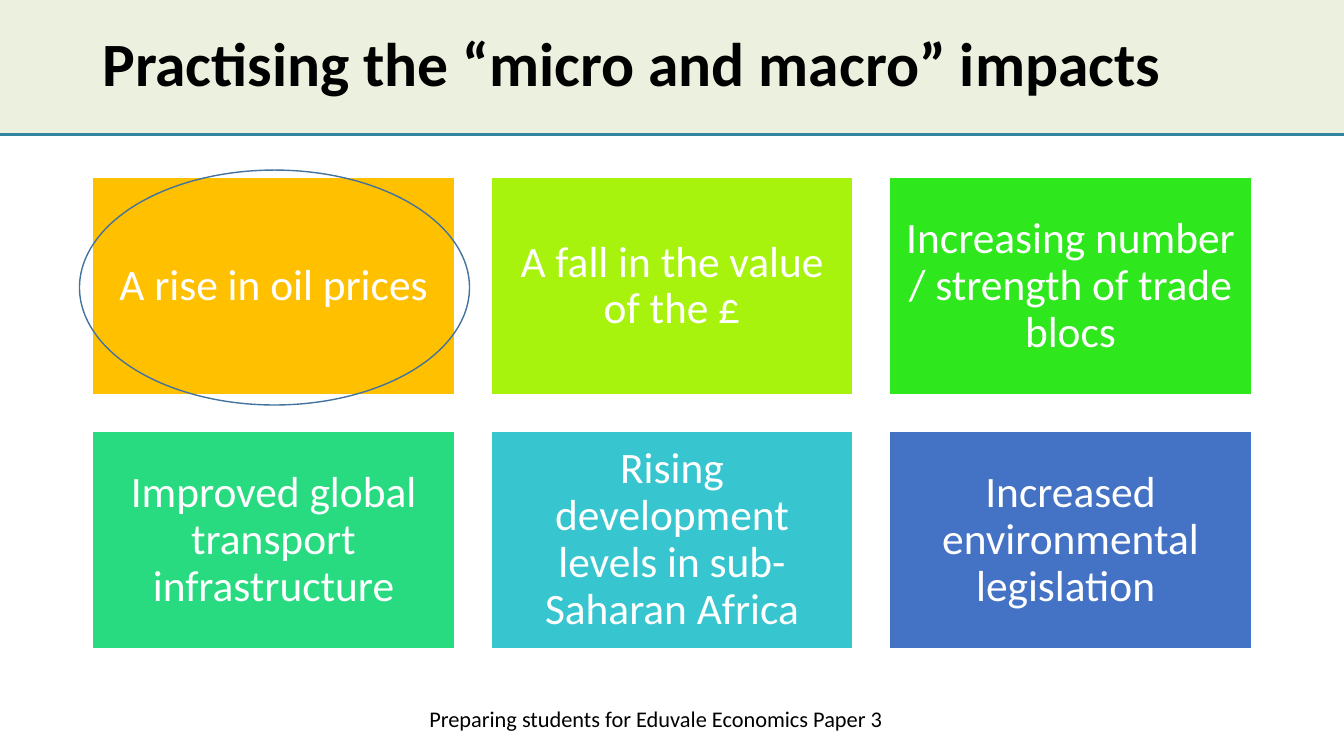
from dataclasses import dataclass

from lxml import etree
from pptx import Presentation
from pptx.dml.color import RGBColor
from pptx.enum.shapes import MSO_CONNECTOR, MSO_SHAPE
from pptx.enum.text import MSO_ANCHOR, PP_ALIGN
from pptx.oxml.ns import qn
from pptx.shapes.autoshape import Shape
from pptx.slide import Slide
from pptx.util import Pt

RECTANGLE = MSO_SHAPE.RECTANGLE
OVAL = MSO_SHAPE.OVAL
STRAIGHT = MSO_CONNECTOR.STRAIGHT
MIDDLE = MSO_ANCHOR.MIDDLE
LEFT = PP_ALIGN.LEFT
CENTER = PP_ALIGN.CENTER

SLIDE_WIDTH, SLIDE_HEIGHT = 960, 540
FONT = "Calibri"
BLACK, WHITE = "000000", "FFFFFF"
HEADER_HEIGHT = 96

# Grid: the gap is a tenth of a tile's width, the height six tenths
COLUMNS = 3
GRID_LEFT, GRID_TOP, GRID_WIDTH = 66, 127, 828
TILE_WIDTH = GRID_WIDTH / (COLUMNS + 0.1 * (COLUMNS - 1))
TILE_HEIGHT = 0.6 * TILE_WIDTH
TILE_GAP = 0.1 * TILE_WIDTH
TILE_INSET = 9.3


@dataclass(frozen=True)
class Box:
    left: float
    top: float
    width: float
    height: float

    def lengths(self) -> tuple[Pt, Pt, Pt, Pt]:
        return Pt(self.left), Pt(self.top), Pt(self.width), Pt(self.height)


@dataclass(frozen=True)
class TextStyle:
    size: float
    color: str
    alignment: PP_ALIGN = CENTER
    bold: bool = False
    line_spacing: float = 1.0


@dataclass(frozen=True)
class Tile:
    text: str
    fill: str


TITLE_STYLE = TextStyle(44, BLACK, LEFT, bold=True, line_spacing=0.9)
TILE_STYLE = TextStyle(31, WHITE, line_spacing=0.9)
FOOTER_STYLE = TextStyle(16, BLACK)

TILES = [
    Tile("A rise in oil prices", "FFC000"),
    Tile("A fall in the value of the £", "A7F30E"),
    Tile("Increasing number / strength of trade blocs", "2EE71C"),
    Tile("Improved global transport infrastructure", "29DB80"),
    Tile("Rising development levels in sub-Saharan Africa", "37C6CF"),
    Tile("Increased environmental legislation ", "4472C4"),
]


def rgb(color: str) -> RGBColor:
    return RGBColor.from_string(color)


def write_text(shape: Shape, text: str, style: TextStyle) -> None:
    text_frame = shape.text_frame
    text_frame.word_wrap = True
    text_frame.vertical_anchor = MIDDLE
    text_frame.text = text
    paragraph = text_frame.paragraphs[0]
    paragraph.alignment = style.alignment
    paragraph.line_spacing = style.line_spacing
    font = paragraph.runs[0].font
    font.name = FONT
    font.size = Pt(style.size)
    font.bold = style.bold
    font.color.rgb = rgb(style.color)


def add_text(slide: Slide, box: Box, text: str, style: TextStyle) -> None:
    write_text(slide.shapes.add_textbox(*box.lengths()), text, style)


def add_preset(slide: Slide, kind: MSO_SHAPE, box: Box,
               fill: str | None = None, line: str | None = None) -> Shape:
    shape = slide.shapes.add_shape(kind, *box.lengths())
    shape.shadow.inherit = False
    if fill:
        shape.fill.solid()
        shape.fill.fore_color.rgb = rgb(fill)
    else:
        shape.fill.background()
    if line:
        shape.line.color.rgb = rgb(line)
        shape.line.width = Pt(1)
    else:
        shape.line.fill.background()
    return shape


def add_tile(slide: Slide, index: int, tile: Tile) -> None:
    row, column = divmod(index, COLUMNS)
    box = Box(GRID_LEFT + column * (TILE_WIDTH + TILE_GAP),
              GRID_TOP + row * (TILE_HEIGHT + TILE_GAP),
              TILE_WIDTH, TILE_HEIGHT)
    shape = add_preset(slide, RECTANGLE, box, tile.fill, WHITE)
    write_text(shape, tile.text, TILE_STYLE)
    text_frame = shape.text_frame
    text_frame.margin_left = text_frame.margin_right = Pt(TILE_INSET)
    text_frame.margin_top = text_frame.margin_bottom = Pt(TILE_INSET)


def add_header_rule(slide: Slide) -> None:
    rule = slide.shapes.add_connector(
        STRAIGHT, Pt(0), Pt(HEADER_HEIGHT), Pt(SLIDE_WIDTH), Pt(HEADER_HEIGHT))
    rule.line.color.rgb = rgb("31859C")
    rule.line.width = Pt(1.75)
    etree.SubElement(rule._element.spPr, qn("a:effectLst"))


def main() -> None:
    presentation = Presentation()
    presentation.slide_width = Pt(SLIDE_WIDTH)
    presentation.slide_height = Pt(SLIDE_HEIGHT)
    slide = presentation.slides.add_slide(presentation.slide_layouts[6])

    # Header band
    add_preset(slide, RECTANGLE, Box(0, 0, SLIDE_WIDTH, HEADER_HEIGHT), "EBF1DE")
    add_header_rule(slide)

    # Topic tiles
    for index, tile in enumerate(TILES):
        add_tile(slide, index, tile)

    # Title and footer
    add_text(slide, Box(GRID_LEFT, 7.2, GRID_WIDTH, 80.6),
             "Practising the “micro and macro” impacts", TITLE_STYLE)
    add_text(slide, Box(294.5, 500.5, 348, 25),
             "Preparing students for Eduvale Economics Paper 3", FOOTER_STYLE)

    # Ring around the first topic
    add_preset(slide, OVAL, Box(56.8, 121.5, 278.6, 167.8), line="43739E")

    presentation.save("out.pptx")


if __name__ == "__main__":
    main()
